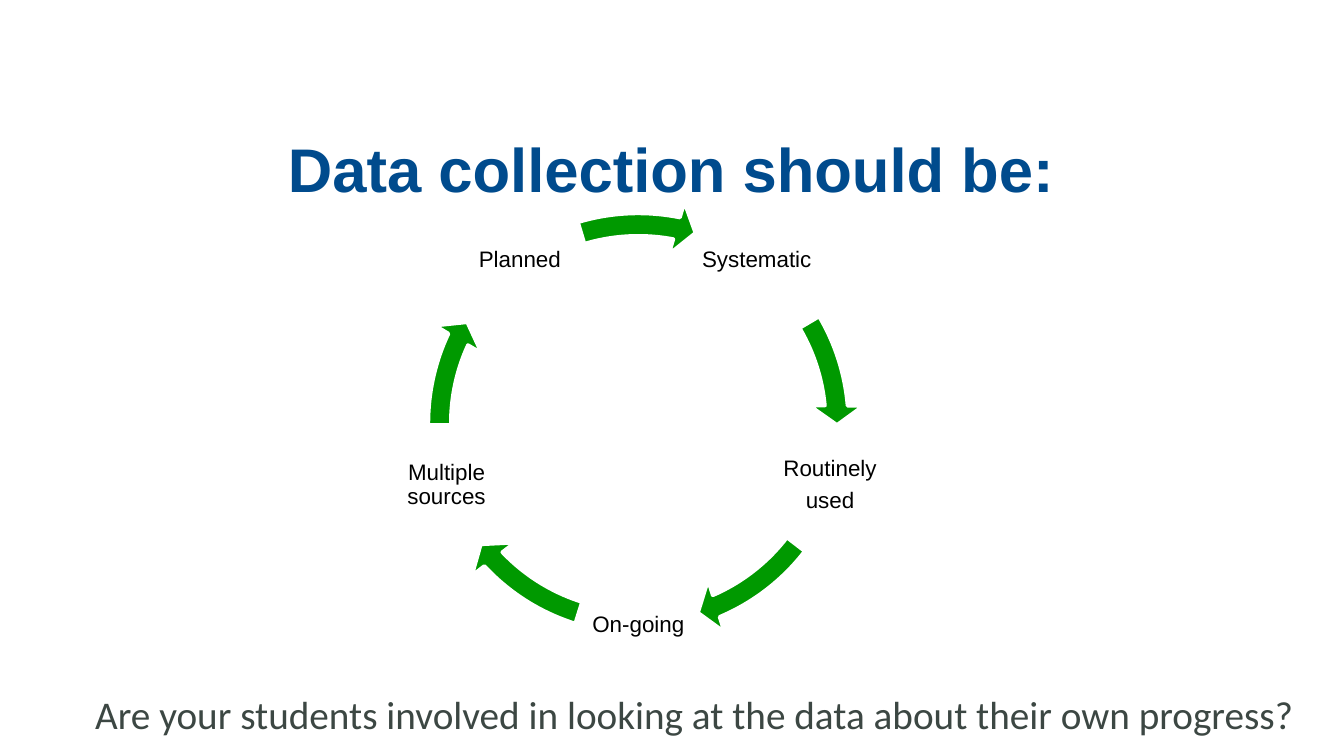
import math

import pptx
import pptx.dml.color
import pptx.enum.shapes
import pptx.enum.text
import pptx.util

Inches = pptx.util.Inches
Pt = pptx.util.Pt
CENTER = pptx.enum.text.PP_ALIGN.CENTER
MIDDLE = pptx.enum.text.MSO_ANCHOR.MIDDLE


def color(value):
    return pptx.dml.color.RGBColor.from_string(value)


def write(frame, text, size, fill, font="Arial", bold=False, align=None,
          anchor=None, inset=None, line_spacing=None, space_after=None):
    """Fill a text frame, one paragraph for each line of text."""
    frame.word_wrap = True
    if anchor is not None:
        frame.vertical_anchor = anchor
    if inset is not None:
        frame.margin_left = frame.margin_right = Inches(inset)
        frame.margin_top = frame.margin_bottom = Inches(inset)
    for index, line in enumerate(text.split("\n")):
        para = frame.add_paragraph() if index else frame.paragraphs[0]
        para.alignment = align
        para.line_spacing = line_spacing
        if space_after is not None:
            para.space_after = Pt(space_after)
        span = para.add_run()
        span.text = line
        span.font.name = font
        span.font.size = Pt(size)
        span.font.bold = bold
        span.font.color.rgb = color(fill)


class CycleSlide:
    blue = "004B8D"
    green = "009900"
    gray = "3C4743"
    center_x, center_y = 4.75, 3.15
    label_radius, label_size = 1.5, 0.9
    arrow_left, arrow_top, arrow_size = 3.07, 1.47, 3.36

    def __init__(self, deck):
        self.page = deck.slides.add_slide(deck.slide_layouts[5])

    def title(self, text, left, top, width, height):
        box = self.page.shapes.title
        box.left, box.top = Inches(left), Inches(top)
        box.width, box.height = Inches(width), Inches(height)
        write(box.text_frame, text, 33, self.blue, bold=True,
              align=CENTER, anchor=MIDDLE)

    def label(self, text, angle):
        """Center a label on the ring, at degrees clockwise from the right."""
        turn = math.radians(angle)
        half = self.label_size / 2
        left = self.center_x + self.label_radius * math.cos(turn) - half
        top = self.center_y + self.label_radius * math.sin(turn) - half
        box = self.page.shapes.add_textbox(
            Inches(left), Inches(top),
            Inches(self.label_size), Inches(self.label_size))
        write(box.text_frame, text, 12, "000000", align=CENTER, anchor=MIDDLE,
              inset=0.02, line_spacing=0.9, space_after=4.2)

    def arrow(self, start, end):
        """Draw one arc of the cycle between two angles in degrees."""
        shape = self.page.shapes.add_shape(
            pptx.enum.shapes.MSO_SHAPE.CIRCULAR_ARROW,
            Inches(self.arrow_left), Inches(self.arrow_top),
            Inches(self.arrow_size), Inches(self.arrow_size))
        # Angle adjustments count 0.6 for each degree
        values = (0.05, 5.6 * 0.6, end * 0.6, start * 0.6, 0.06)
        for index, value in enumerate(values):
            shape.adjustments[index] = value
        shape.shadow.inherit = False
        shape.fill.solid()
        shape.fill.fore_color.rgb = color(self.green)
        shape.line.color.rgb = color("FFFFFF")
        shape.line.width = Pt(2)

    def question(self, text, left, top, width, height):
        box = self.page.shapes.add_textbox(
            Inches(left), Inches(top), Inches(width), Inches(height))
        write(box.text_frame, text, 21, self.gray, font="Calibri")


def main():
    deck = pptx.Presentation()
    # Widescreen, 16 to 9
    deck.slide_width = Inches(10)
    deck.slide_height = Inches(10 * 9 / 16)
    slide = CycleSlide(deck)

    # Cycle: each label with the start and end of the arrow that follows it
    steps = [
        ("Systematic", 329.43, 354.9),
        ("Routinely\nused", 37.55, 66.93),
        ("On-going", 107.48, 136.86),
        ("Multiple sources", 179.5, 204.98),
        ("Planned", 253.3, 281.11),
    ]
    for index, (text, start, end) in enumerate(steps):
        slide.label(text, -54 + index * 360 / len(steps))
        slide.arrow(start, end)

    # Heading and closing question
    slide.title("Data collection should be:", 0.16, 0.81, 9.67, 0.88)
    slide.question("Are your students involved in looking at the data about "
                   "their own progress?", 0.61, 5.09, 9.16, 0.45)
    deck.save("out.pptx")


if __name__ == "__main__":
    main()
